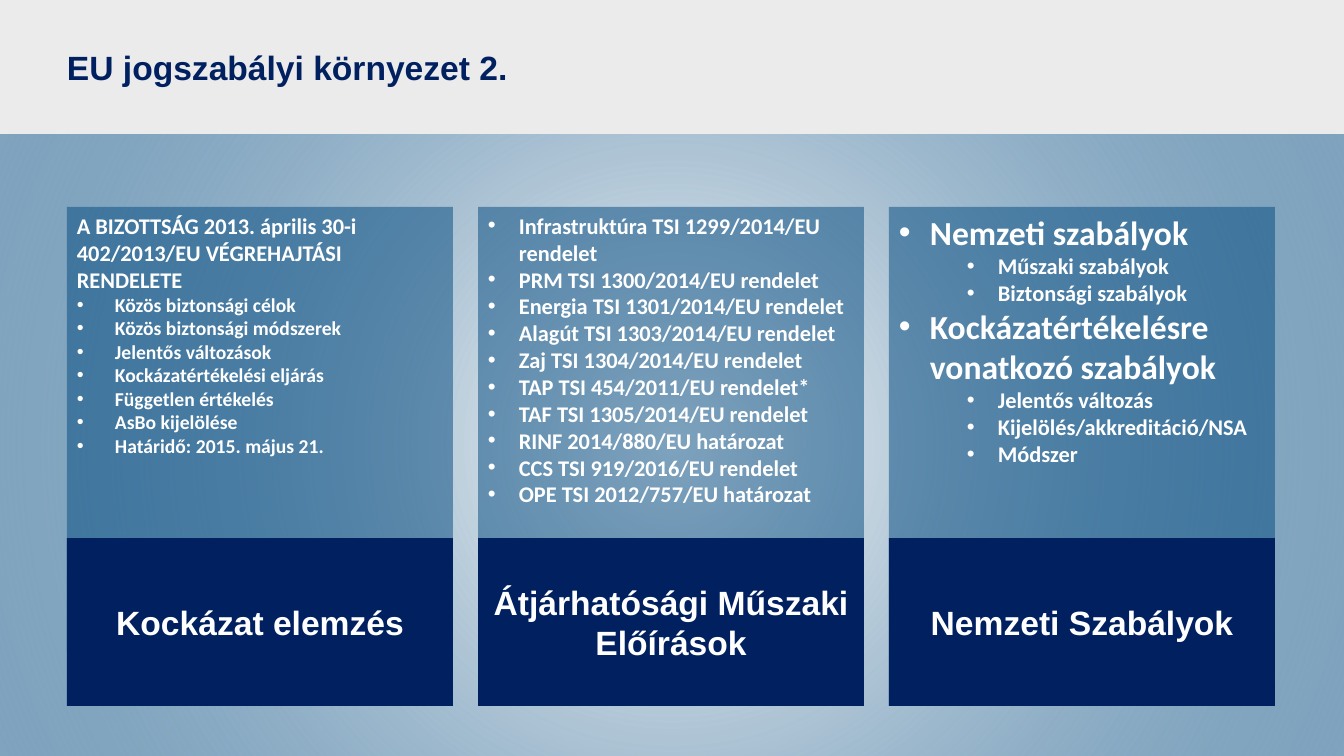
from lxml.etree import SubElement
from pptx import Presentation
from pptx.dml.color import RGBColor
from pptx.enum.shapes import MSO_SHAPE as SHAPE
from pptx.enum.text import MSO_ANCHOR as ANCHOR, PP_ALIGN as ALIGN
from pptx.oxml import parse_xml
from pptx.oxml.ns import nsdecls, qn
from pptx.util import Pt

EMU_PER_PX = 914400 / 100.8
COLORS = {"navy": "002060", "blue": "00487E", "band": "EBEBEB", "white": "FFFFFF"}

SLIDE_WIDTH, SLIDE_HEIGHT, HEADER_HEIGHT = 1344, 756, 134
COLUMN_LEFT, COLUMN_PITCH, COLUMN_WIDTH = 67, 411, 386
CARD_TOP, LABEL_TOP, LABEL_HEIGHT = 207, 538, 168
SUBITEM_INDENT = 99

COLUMNS = [
    {
        "label": "Kockázat elemzés", "height": 446, "hanging": 38,
        "items": [("heading", 16, "A BIZOTTSÁG 2013. április 30-i 402/2013/EU VÉGREHAJTÁSI RENDELETE")]
        + [("item", 14, text) for text in (
            "Közös biztonsági célok",
            "Közös biztonsági módszerek",
            "Jelentős változások",
            "Kockázatértékelési eljárás",
            "Független értékelés",
            "AsBo kijelölése",
            "Határidő: 2015. május 21.",
        )],
    },
    {
        "label": "Átjárhatósági Műszaki Előírások", "height": 446, "hanging": 31,
        "items": [("item", 16, text) for text in (
            "Infrastruktúra TSI 1299/2014/EU rendelet",
            "PRM TSI 1300/2014/EU rendelet",
            "Energia TSI 1301/2014/EU rendelet",
            "Alagút TSI 1303/2014/EU rendelet",
            "Zaj TSI 1304/2014/EU rendelet",
            "TAP TSI 454/2011/EU rendelet*",
            "TAF TSI 1305/2014/EU rendelet",
            "RINF 2014/880/EU határozat",
            "CCS TSI 919/2016/EU rendelet",
            "OPE TSI 2012/757/EU határozat",
        )],
    },
    {
        "label": "Nemzeti Szabályok", "height": 499, "hanging": 31,
        "items": [
            ("item", 24, "Nemzeti szabályok"),
            ("subitem", 16, "Műszaki szabályok"),
            ("subitem", 16, "Biztonsági szabályok"),
            ("item", 24, "Kockázatértékelésre vonatkozó szabályok"),
            ("subitem", 16, "Jelentős változás"),
            ("subitem", 16, "Kijelölés/akkreditáció/NSA"),
            ("subitem", 16, "Módszer"),
        ],
    },
]


def px(value):
    return round(value * EMU_PER_PX)


def color(name):
    return RGBColor.from_string(COLORS[name])


def add_rectangle(slide, left, top, width, height, fill=None, opacity=100):
    shape = slide.shapes.add_shape(SHAPE.RECTANGLE, px(left), px(top), px(width), px(height))
    shape.shadow.inherit = False
    shape.line.fill.background()
    if fill is None:
        shape.fill.background()
        return shape
    shape.fill.solid()
    shape.fill.fore_color.rgb = color(fill)
    if opacity < 100:
        tint = shape._element.spPr.find(qn("a:solidFill")).find(qn("a:srgbClr"))
        SubElement(tint, qn("a:alpha"), val=str(opacity * 1000))
    return shape


def add_glow(slide):
    shape = add_rectangle(slide, 0, HEADER_HEIGHT, SLIDE_WIDTH, SLIDE_HEIGHT - HEADER_HEIGHT)
    gradient = parse_xml(
        f'<a:gradFill {nsdecls("a")} rotWithShape="1"><a:gsLst>'
        f'<a:gs pos="0"><a:srgbClr val="{COLORS["white"]}"/></a:gs>'
        f'<a:gs pos="100000"><a:srgbClr val="{COLORS["blue"]}"><a:alpha val="50000"/></a:srgbClr></a:gs>'
        '</a:gsLst><a:path path="circle">'
        '<a:fillToRect l="50000" t="50000" r="50000" b="50000"/></a:path></a:gradFill>'
    )
    properties = shape._element.spPr
    properties.replace(properties.find(qn("a:noFill")), gradient)


def format_runs(paragraph, font_name, size, font_color):
    for run in paragraph.runs:
        run.font.name = font_name
        run.font.size = Pt(size)
        run.font.bold = True
        run.font.color.rgb = color(font_color)


def add_bullet(paragraph, margin, hanging):
    properties = paragraph._p.get_or_add_pPr()
    properties.set("marL", str(px(margin)))
    properties.set("indent", str(-px(hanging)))
    SubElement(properties, qn("a:buFont"), typeface="Arial")
    SubElement(properties, qn("a:buChar"), char="•")


def place_title(slide, text):
    title = slide.shapes.title
    title.left, title.top, title.width, title.height = px(67), px(17), px(1210), px(101)
    frame = title.text_frame
    frame.text = text
    frame.margin_left = frame.margin_right = frame.margin_top = frame.margin_bottom = 0
    frame.vertical_anchor = ANCHOR.MIDDLE
    frame.paragraphs[0].alignment = ALIGN.LEFT
    format_runs(frame.paragraphs[0], "Arial", 24, "navy")
    slide.shapes._spTree.append(title._element)


def add_card(slide, left, column):
    shape = add_rectangle(slide, left, CARD_TOP, COLUMN_WIDTH, column["height"], "blue", 50)
    frame = shape.text_frame
    frame.word_wrap = True
    frame.vertical_anchor = ANCHOR.TOP
    for index, (kind, size, text) in enumerate(column["items"]):
        paragraph = frame.add_paragraph() if index else frame.paragraphs[0]
        paragraph.text = text
        paragraph.alignment = ALIGN.LEFT
        if kind == "subitem":
            paragraph.level = 1
            add_bullet(paragraph, SUBITEM_INDENT, column["hanging"])
        elif kind == "item":
            add_bullet(paragraph, column["hanging"], column["hanging"])
        format_runs(paragraph, "Calibri", size, "white")


def add_label(slide, left, text):
    shape = add_rectangle(slide, left, LABEL_TOP, COLUMN_WIDTH, LABEL_HEIGHT, "navy")
    frame = shape.text_frame
    frame.text = text
    frame.word_wrap = True
    frame.vertical_anchor = ANCHOR.MIDDLE
    frame.paragraphs[0].alignment = ALIGN.CENTER
    format_runs(frame.paragraphs[0], "Arial", 24, "white")


def main():
    presentation = Presentation()
    presentation.slide_width = px(SLIDE_WIDTH)
    presentation.slide_height = px(SLIDE_HEIGHT)
    slide = presentation.slides.add_slide(presentation.slide_layouts[5])
    add_glow(slide)
    add_rectangle(slide, 0, 0, SLIDE_WIDTH, HEADER_HEIGHT, "band")
    place_title(slide, "EU jogszabályi környezet 2.")
    for index, column in enumerate(COLUMNS):
        left = COLUMN_LEFT + index * COLUMN_PITCH
        add_card(slide, left, column)
        add_label(slide, left, column["label"])
    presentation.save("out.pptx")


if __name__ == "__main__":
    main()
